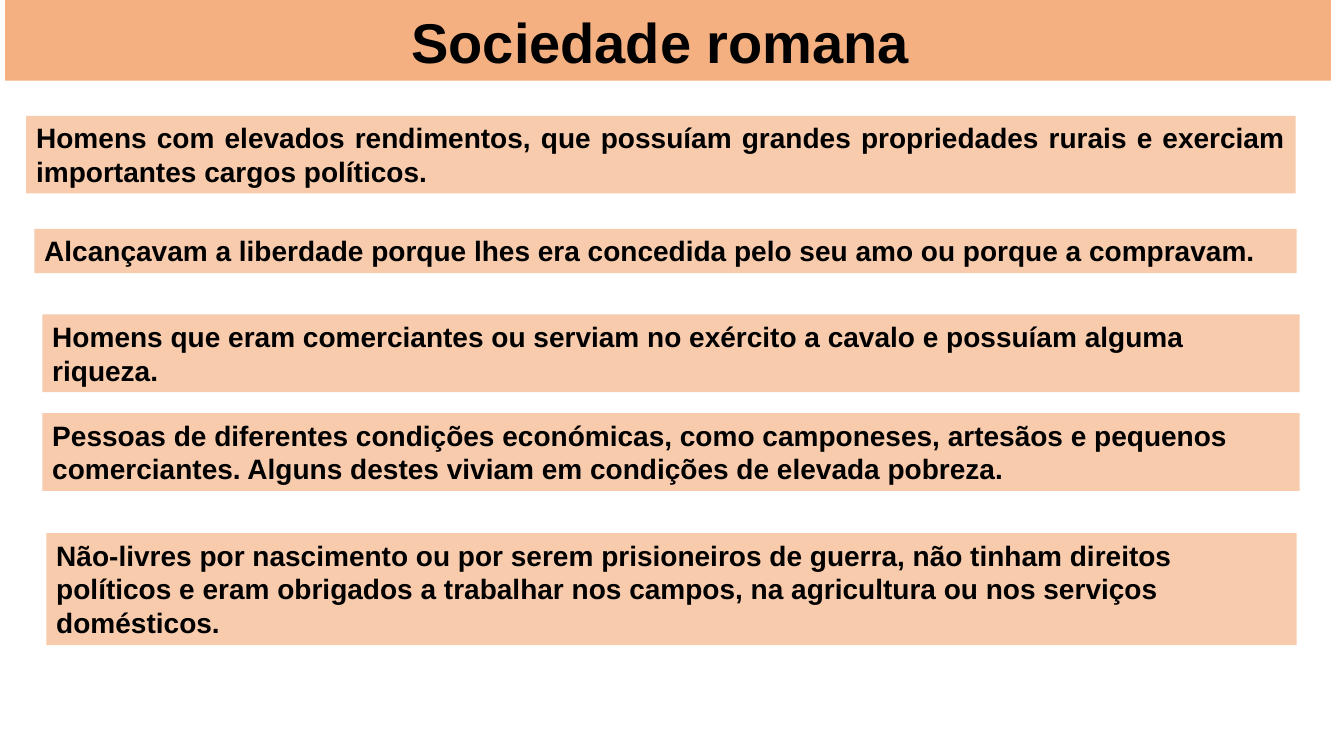
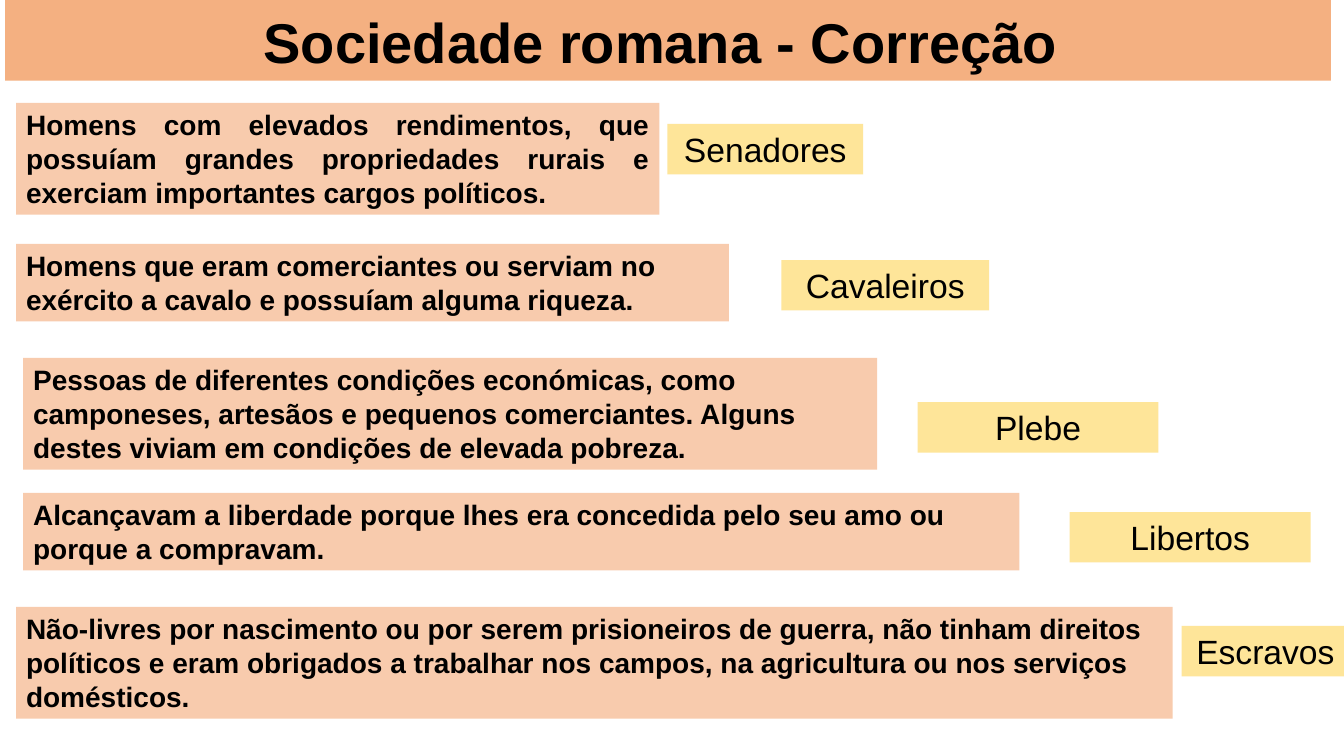
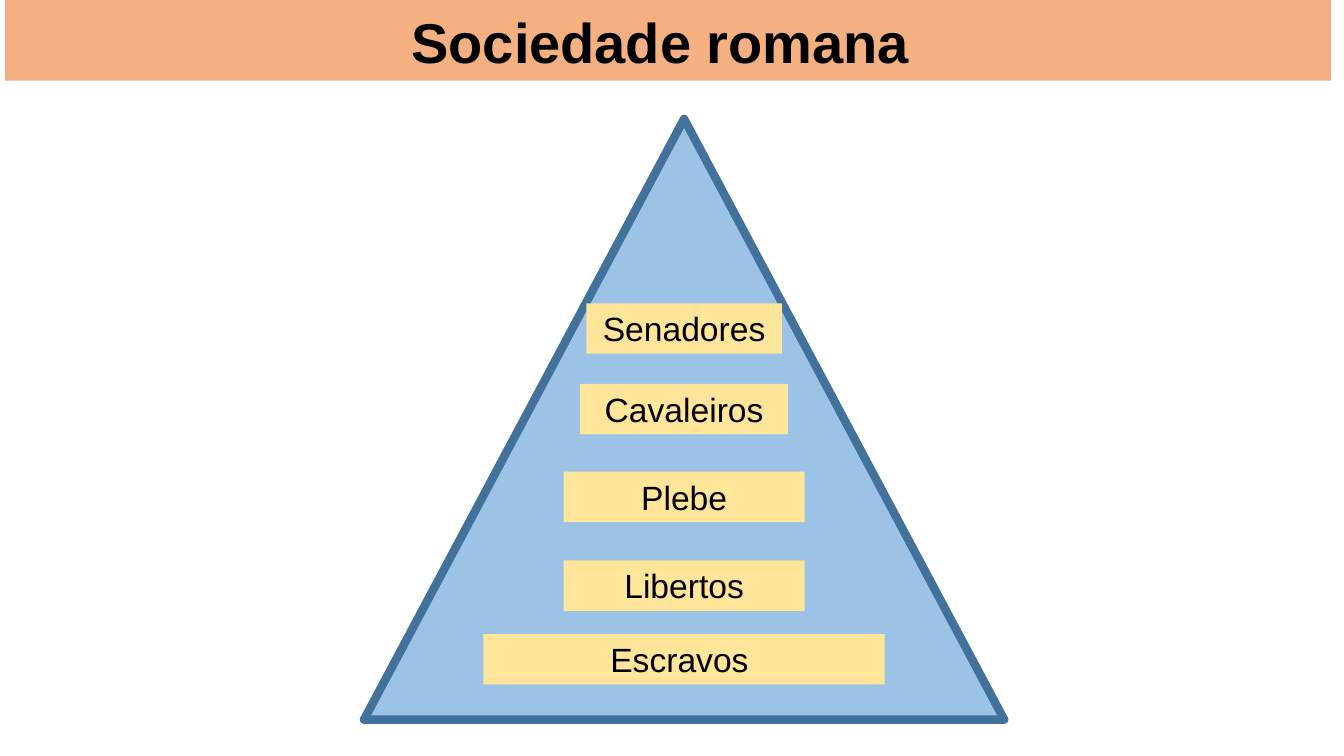
from lxml import etree
from pptx import Presentation
from pptx.dml.color import RGBColor
from pptx.enum.shapes import MSO_SHAPE
from pptx.enum.text import MSO_ANCHOR, MSO_AUTO_SIZE, PP_ALIGN
from pptx.oxml.ns import qn
from pptx.util import Emu, Pt

LEFT, CENTER, JUSTIFY = PP_ALIGN.LEFT, PP_ALIGN.CENTER, PP_ALIGN.JUSTIFY
BOTTOM = MSO_ANCHOR.BOTTOM
GROW, FIXED = MSO_AUTO_SIZE.SHAPE_TO_FIT_TEXT, MSO_AUTO_SIZE.NONE
EXTRACT = MSO_SHAPE.FLOWCHART_EXTRACT

SCALE = 9144
WIDE, HIGH = 1333, 750
FONT = "Arial"
INK, BAND, CARD, TAG = "000000", "F4B081", "F8CBAD", "FEE599"
SKY, EDGE = "9CC2E5", "42719B"
HEAD_BOX = (5, 0, 1315, 80)
TAG_HIGH = 50

SENATE = ("Homens com elevados rendimentos, que possuíam grandes propriedades "
          "rurais e exerciam importantes cargos políticos.")
KNIGHT = ("Homens que eram comerciantes ou serviam no exército a cavalo e "
          "possuíam alguma riqueza.")
PLEBS = ("Pessoas de diferentes condições económicas, como camponeses, artesãos "
         "e pequenos comerciantes. Alguns destes viviam em condições de elevada "
         "pobreza.")
FREED = ("Alcançavam a liberdade porque lhes era concedida pelo seu amo ou "
         "porque a compravam.")
SLAVE = ("Não-livres por nascimento ou por serem prisioneiros de guerra, não "
         "tinham direitos políticos e eram obrigados a trabalhar nos campos, na "
         "agricultura ou nos serviços domésticos.")

CLUES = [
    (SENATE, (26, 115, 1259, 77)),
    (FREED, (34, 227, 1252, 44)),
    (KNIGHT, (42, 312, 1247, 77)),
    (PLEBS, (42, 410, 1247, 77)),
    (SLAVE, (46, 529, 1240, 111)),
]
PAIRS = [
    (SENATE, (16, 102, 638, 111), "Senadores", (662, 123, 194)),
    (KNIGHT, (16, 242, 707, 77), "Cavaleiros", (775, 258, 206)),
    (PLEBS, (23, 355, 847, 111), "Plebe", (910, 399, 239)),
    (FREED, (23, 489, 988, 77), "Libertos", (1061, 508, 239)),
    (SLAVE, (16, 602, 1147, 111), "Escravos ", (1172, 621, 166)),
]
RANKS = [
    ("Senadores", 183, 194),
    ("Cavaleiros", 263, 206),
    ("Plebe", 350, 239),
    ("Libertos", 438, 239),
    ("Escravos ", 511, 398),
]


def px(count):
    return Emu(round(count * SCALE))


def paint(fill, color):
    fill.solid()
    fill.fore_color.rgb = RGBColor.from_string(color)


def write(shape, text, size, bold, align, fit):
    frame = shape.text_frame
    frame.text = text
    frame.word_wrap = True
    frame.auto_size = fit
    line = frame.paragraphs[0]
    line.alignment = align
    font = line.runs[0].font
    font.name, font.size, font.bold = FONT, Pt(size), bold
    font.color.rgb = RGBColor.from_string(INK)
    return line


def label(slide, box, text, color, size, bold, align):
    shape = slide.shapes.add_textbox(*map(px, box))
    paint(shape.fill, color)
    write(shape, text, size, bold, align, GROW)


def card(slide, box, text):
    align = JUSTIFY if text == SENATE else LEFT
    label(slide, box, text, CARD, 20, True, align)


def tag(slide, left, top, width, text):
    label(slide, (left, top, width, TAG_HIGH), text, TAG, 24, False, CENTER)


def start(deck, text):
    slide = deck.slides.add_slide(deck.slide_layouts[5])
    title = slide.shapes.title
    title.left, title.top, title.width, title.height = map(px, HEAD_BOX)
    paint(title.fill, BAND)
    line = write(title, text, 40, True, CENTER, FIXED)
    line.line_spacing = 0.9
    title.text_frame.vertical_anchor = BOTTOM
    return slide


def pyramid(slide, box):
    left, top, width, height = box
    shape = slide.shapes.add_shape(EXTRACT, *map(px, box))
    shape.shadow.inherit = False
    paint(shape.fill, SKY)
    paint(shape.line.fill, EDGE)
    shape.line.width = Pt(6)
    etree.SubElement(shape.element.spPr.find(qn("a:ln")), qn("a:round"))
    for text, down, wide in RANKS:
        tag(slide, left + (width - wide) / 2, top + down, wide, text)


def main():
    deck = Presentation()
    deck.slide_width, deck.slide_height = px(WIDE), px(HIGH)

    task = start(deck, "Sociedade romana ")
    for text, box in CLUES:
        card(task, box, text)

    answer = start(deck, "Sociedade romana - Correção ")
    for text, box, name, place in PAIRS:
        card(answer, box, text)
        tag(answer, *place, name)

    order = start(deck, "Sociedade romana ")
    pyramid(order, (361, 118, 635, 596))

    deck.save("out.pptx")


if __name__ == "__main__":
    main()
